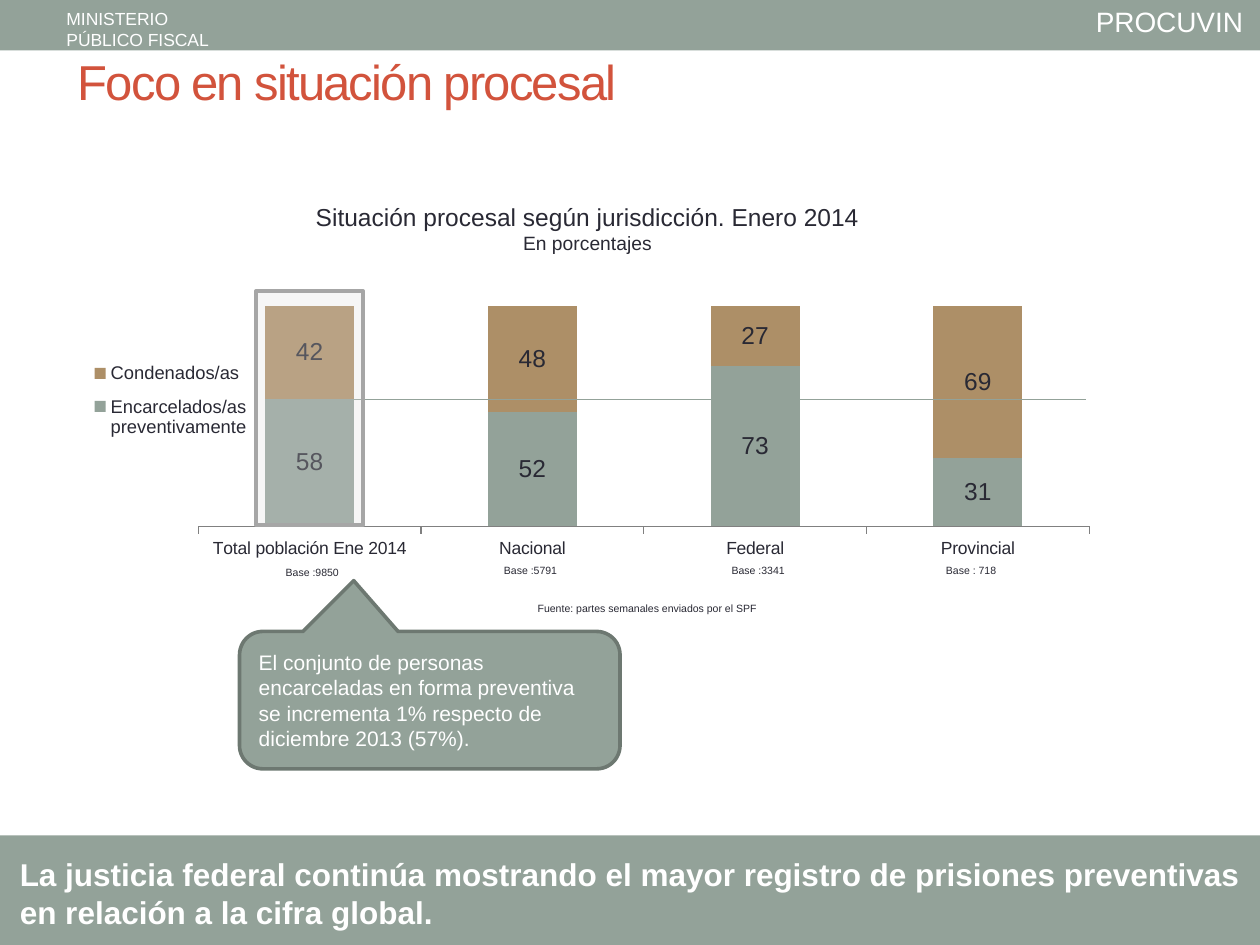
from lxml import etree
from pptx import Presentation
from pptx.chart.data import CategoryChartData
from pptx.dml.color import RGBColor
from pptx.enum.chart import XL_CHART_TYPE, XL_LABEL_POSITION, XL_LEGEND_POSITION, XL_TICK_MARK
from pptx.enum.shapes import MSO_CONNECTOR, MSO_SHAPE
from pptx.enum.text import MSO_ANCHOR, MSO_AUTO_SIZE, PP_ALIGN
from pptx.oxml.ns import qn
from pptx.util import Cm, Pt

STACKED = XL_CHART_TYPE.COLUMN_STACKED_100
LABEL_CENTER = XL_LABEL_POSITION.CENTER
LEGEND_RIGHT = XL_LEGEND_POSITION.RIGHT
TICK_OUT, TICK_NONE = XL_TICK_MARK.OUTSIDE, XL_TICK_MARK.NONE
STRAIGHT = MSO_CONNECTOR.STRAIGHT
RECT, CALLOUT = MSO_SHAPE.RECTANGLE, MSO_SHAPE.ROUNDED_RECTANGULAR_CALLOUT
TOP, MIDDLE = MSO_ANCHOR.TOP, MSO_ANCHOR.MIDDLE
GROW, FIXED = MSO_AUTO_SIZE.SHAPE_TO_FIT_TEXT, MSO_AUTO_SIZE.NONE
LEFT, CENTER = PP_ALIGN.LEFT, PP_ALIGN.CENTER

FONT = "Arial"
COLORS = {
    "sage": "93A299",
    "sage_dark": "6D7871",
    "tan": "AD8F67",
    "red": "D2533C",
    "ink": "292934",
    "white": "FFFFFF",
    "axis": "808080",
    "veil": "DDDDDD",
    "frame": "A6A6A6",
}


def rgb(name):
    return RGBColor.from_string(COLORS[name])


def style_font(font, size, color):
    font.name = FONT
    font.size = Pt(size)
    font.color.rgb = rgb(color)


def manual_layout(x, y, w, h, inner=False):
    layout = etree.Element(qn("c:layout"))
    manual = etree.SubElement(layout, qn("c:manualLayout"))
    settings = [("layoutTarget", "inner")] if inner else []
    settings += [("xMode", "edge"), ("yMode", "edge"), ("x", x), ("y", y), ("w", w), ("h", h)]
    for tag, value in settings:
        etree.SubElement(manual, qn(f"c:{tag}")).set("val", str(value))
    return layout


class SlideBuilder:
    def __init__(self, slide):
        self.slide = slide

    def add_lines(self, frame, lines, color, align=LEFT, bold=False, spacing=None):
        for index, (text, size) in enumerate(lines):
            paragraph = frame.paragraphs[0] if index == 0 else frame.add_paragraph()
            paragraph.alignment = align
            run = paragraph.add_run()
            run.text = text
            style_font(run.font, size, color)
            run.font.bold = bold
            if spacing:
                run.font._element.set("spc", str(spacing))

    def text(self, box, lines, color="ink", wrap=False, anchor=TOP, autosize=GROW, **style):
        frame = self.slide.shapes.add_textbox(*map(Cm, box)).text_frame
        frame.word_wrap = wrap
        frame.auto_size = autosize
        frame.vertical_anchor = anchor
        self.add_lines(frame, lines, color, **style)

    def shape(self, kind, box, fill, line=None, opacity=None):
        shape = self.slide.shapes.add_shape(kind, *map(Cm, box))
        shape.shadow.inherit = False
        shape.fill.solid()
        shape.fill.fore_color.rgb = rgb(fill)
        if opacity:
            color = shape._element.spPr.find(".//" + qn("a:srgbClr"))
            etree.SubElement(color, qn("a:alpha")).set("val", str(opacity * 1000))
        if line:
            shape.line.color.rgb = rgb(line)
            shape.line.width = Pt(2.08)
        else:
            shape.line.fill.background()
        return shape

    def callout(self, box, text, size, adjustments):
        callout = self.shape(CALLOUT, box, "sage", "sage_dark")
        for index, value in enumerate(adjustments):
            callout.adjustments[index] = value
        callout.text_frame.word_wrap = True
        callout.text_frame.vertical_anchor = MIDDLE
        self.add_lines(callout.text_frame, [(text, size)], "white")

    def line(self, x1, y1, x2, y2, color, width):
        line = self.slide.shapes.add_connector(STRAIGHT, Cm(x1), Cm(y1), Cm(x2), Cm(y2))
        line.line.color.rgb = rgb(color)
        line.line.width = Pt(width)
        etree.SubElement(line._element.spPr, qn("a:effectLst"))

    def stacked_chart(self, box, categories, series):
        data = CategoryChartData(number_format="0")
        data.categories = categories
        for name, values, _ in series:
            data.add_series(name, values)
        chart = self.slide.shapes.add_chart(STACKED, *map(Cm, box), data).chart
        chart.has_title = False
        style_font(chart.font, 18, "ink")

        plot = chart.plots[0]
        plot.gap_width = 150
        plot.overlap = 100
        plot.vary_by_categories = False
        for drawn, (_, _, color) in zip(plot.series, series):
            drawn.format.fill.solid()
            drawn.format.fill.fore_color.rgb = rgb(color)
            labels = drawn.data_labels
            labels.show_value = True
            labels.position = LABEL_CENTER
            style_font(labels.font, 14, "ink")

        axis = chart.category_axis
        axis.major_tick_mark = TICK_OUT
        axis.minor_tick_mark = TICK_NONE
        axis.format.line.color.rgb = rgb("axis")
        style_font(axis.tick_labels.font, 10, "ink")
        chart.value_axis.has_major_gridlines = False
        chart.value_axis.visible = False

        chart.has_legend = True
        legend = chart.legend
        legend.position = LEGEND_RIGHT
        legend.include_in_layout = False
        style_font(legend.font, 10.5, "ink")

        plot_area = chart._chartSpace.chart.plotArea
        for parent in (plot_area, legend._element):
            for old in parent.findall(qn("c:layout")):
                parent.remove(old)
        plot_area.insert(0, manual_layout(0.126, 0.034, 0.839, 0.82, inner=True))
        overlay = legend._element.find(qn("c:overlay"))
        overlay.addprevious(manual_layout(0.02, 0.2, 0.16, 0.37))


def main():
    deck = Presentation()
    deck.slide_width, deck.slide_height = Cm(25.4), Cm(19.05)
    page = SlideBuilder(deck.slides.add_slide(deck.slide_layouts[6]))

    page.shape(RECT, (0, 0, 25.4, 1.02), "sage")
    page.text((21.84, -0.03, 3.51, 0.94), [("PROCUVIN", 16)], "white")
    page.text((1.09, 0.03, 3.4, 1.12), [("MINISTERIO", 10), ("PÚBLICO FISCAL", 10)], "white")

    page.callout(
        (4.83, 12.73, 7.67, 2.77),
        "El conjunto de personas encarceladas en forma preventiva "
        "se incrementa 1% respecto de diciembre 2013 (57%).",
        12,
        (-0.2, -0.87, 0.17),
    )
    page.stacked_chart(
        (1.3, 5.99, 21.41, 5.41),
        ["Total población Ene 2014", "Nacional", "Federal", "Provincial"],
        [
            ("Encarcelados/as preventivamente", (58, 52, 73, 31), "sage"),
            ("Condenados/as", (42, 48, 27, 69), "tan"),
        ],
    )
    page.text((1.32, 0.05, 22.86, 3.18), [("Foco en situación procesal", 28)], "red",
              wrap=True, anchor=MIDDLE, autosize=FIXED, spacing=-100)
    page.shape(RECT, (0, 16.84, 25.4, 2.34), "sage")
    page.text((10.59, 12.01, 4.98, 0.51), [("Fuente: partes semanales enviados por el SPF", 6)])
    page.text(
        (4.95, 3.94, 13.79, 1.32),
        [("Situación procesal según jurisdicción. Enero 2014", 14), ("En porcentajes", 11)],
        wrap=True, align=CENTER,
    )
    page.line(5.38, 8.05, 21.89, 8.05, "sage", 0.75)
    page.shape(RECT, (5.16, 5.87, 2.16, 4.72), "veil", "frame", opacity=25)

    bases = [(5.51, 11.28, "9850"), (9.91, 11.25, "5791"), (14.5, 11.25, "3341"), (18.82, 11.25, " 718")]
    for left, top, base in bases:
        page.text((left, top, 1.6, 0.51), [(f"Base :{base}", 6)])

    page.text(
        (0.15, 17.12, 25.4, 1.8),
        [("La justicia federal continúa mostrando el mayor registro de prisiones preventivas "
          "en relación a la cifra global.", 18)],
        "white", wrap=True, bold=True,
    )
    deck.save("out.pptx")


if __name__ == "__main__":
    main()
